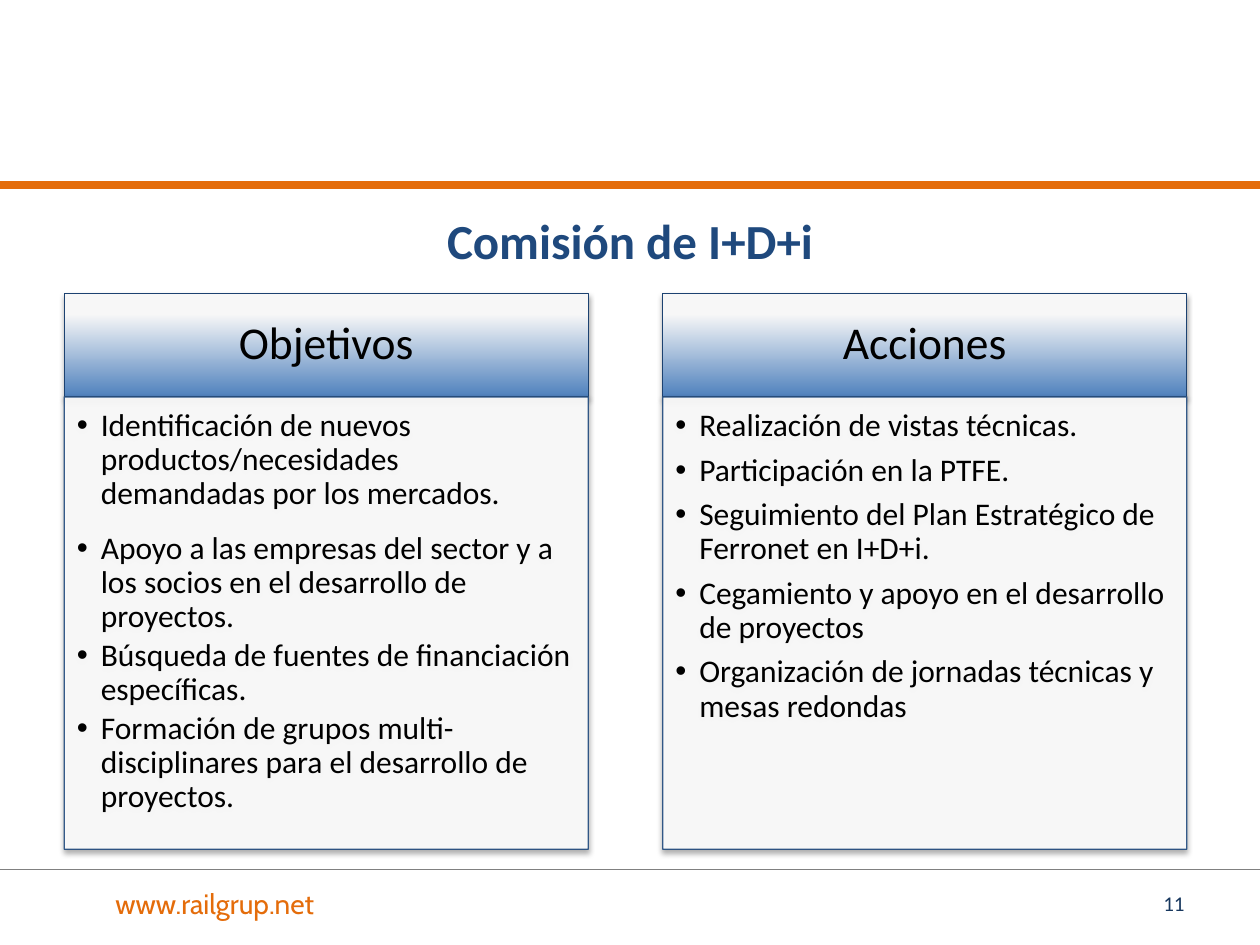
from pptx import Presentation
from pptx.dml.color import RGBColor
from pptx.enum.shapes import MSO_CONNECTOR
from pptx.enum.text import MSO_ANCHOR, MSO_AUTO_SIZE, PP_ALIGN
from pptx.oxml import parse_xml
from pptx.oxml.ns import nsdecls, qn
from pptx.util import Inches, Pt
from copy import deepcopy

STRAIGHT = MSO_CONNECTOR.STRAIGHT
TOP, MIDDLE = MSO_ANCHOR.TOP, MSO_ANCHOR.MIDDLE
LEFT, CENTER, RIGHT = PP_ALIGN.LEFT, PP_ALIGN.CENTER, PP_ALIGN.RIGHT
NO_AUTOFIT = MSO_AUTO_SIZE.NONE

ORANGE = RGBColor(0xE4, 0x6C, 0x0A)
GRAY = RGBColor(0x80, 0x80, 0x80)
NAVY = RGBColor(0x1F, 0x49, 0x7D)
DARK_NAVY = RGBColor(0x17, 0x37, 0x5E)
HEADER_LINE = RGBColor(0x1C, 0x42, 0x71)
BLACK = RGBColor(0, 0, 0)
WHITE = RGBColor(0xFF, 0xFF, 0xFF)
HEADER_STOPS = [
    (0, RGBColor(0x4F, 0x81, 0xBD)),
    (0.8, RGBColor(0xF7, 0xF7, 0xF7)),
    (1, RGBColor(0xF8, 0xF8, 0xF8)),
]

COMPARISON_LAYOUT = 4
PANEL_WIDTH, PANEL_TOP = 4.16, 2.33
HEADER_HEIGHT, BODY_HEIGHT = 0.82, 3.59
BULLET_INDENT = 0.19

# Left edge, heading, items, space after the first item and after the others
PANELS = [
    (0.51, "Objetivos", [
        "Identificación de nuevos productos/necesidades demandadas por los mercados.",
        "Apoyo a las empresas del sector y a los socios en el desarrollo de proyectos.",
        "Búsqueda de fuentes de financiación específicas.",
        "Formación de grupos multi-disciplinares para el desarrollo de proyectos.",
    ], 12, 2.7),
    (5.26, "Acciones", [
        "Realización de vistas técnicas.",
        "Participación en la PTFE.",
        "Seguimiento del Plan Estratégico de Ferronet en I+D+i.",
        "Cegamiento y apoyo en el desarrollo de proyectos",
        "Organización de jornadas técnicas y mesas redondas",
    ], 6, 6),
]


def place(shape, left, top, width, height):
    shape.left, shape.top = Inches(left), Inches(top)
    shape.width, shape.height = Inches(width), Inches(height)


def set_frame(text_frame, anchor, margins=(0.1, 0.05, 0.1, 0.05)):
    text_frame.word_wrap = True
    text_frame.auto_size = NO_AUTOFIT
    text_frame.vertical_anchor = anchor
    (text_frame.margin_left, text_frame.margin_top,
     text_frame.margin_right, text_frame.margin_bottom) = map(Inches, margins)


def format_paragraph(paragraph, size, color, align, font="Calibri", bold=False):
    paragraph.alignment = align
    paragraph.space_before = Pt(0)
    for run in paragraph.runs:
        run.font.name = font
        run.font.size = Pt(size)
        run.font.bold = bold
        run.font.color.rgb = color


def add_bullet(paragraph):
    properties = paragraph._p.get_or_add_pPr()
    properties.set("marL", str(Inches(BULLET_INDENT)))
    properties.set("indent", str(-Inches(BULLET_INDENT)))
    properties.append(parse_xml(f'<a:buFont {nsdecls("a")} typeface="Arial"/>'))
    properties.append(parse_xml(f'<a:buChar {nsdecls("a")} char="•"/>'))


def add_shadow(shape):
    shape._element.spPr.append(parse_xml(
        f'<a:effectLst {nsdecls("a")}>'
        f'<a:outerShdw blurRad="{Pt(3.1)}" dist="{Pt(1.8)}" dir="5400000" rotWithShape="0">'
        '<a:srgbClr val="000000"><a:alpha val="35000"/></a:srgbClr>'
        '</a:outerShdw></a:effectLst>'))


def set_opacity(shape, percent):
    for color in shape._element.spPr.iter(qn("a:srgbClr")):
        color.append(parse_xml(f'<a:alpha {nsdecls("a")} val="{percent * 1000}"/>'))


def set_outline(shape, color):
    shape.line.color.rgb = color
    shape.line.width = Pt(0.75)


def fill_gradient(shape):
    shape.fill.gradient()
    shape.fill.gradient_angle = 90
    stop_list = shape._element.spPr.find(".//" + qn("a:gsLst"))
    stop_list.append(deepcopy(stop_list[-1]))
    for stop, (position, color) in zip(shape.fill.gradient_stops, HEADER_STOPS):
        stop.position = position
        stop.color.rgb = color


def add_rule(slide, top, color, width):
    rule = slide.shapes.add_connector(
        STRAIGHT, Inches(0), Inches(top), Inches(10), Inches(top))
    rule.line.color.rgb = color
    rule.line.width = Pt(width)
    rule._element.spPr.append(parse_xml(f'<a:effectLst {nsdecls("a")}/>'))


def add_footer_text(slide, left, text, size, color, align, font="Calibri"):
    box = slide.shapes.add_textbox(
        Inches(left), Inches(6.97), Inches(2.33), Inches(0.4))
    set_frame(box.text_frame, MIDDLE)
    box.text_frame.text = text
    format_paragraph(box.text_frame.paragraphs[0], size, color, align, font)


def fill_title(title):
    place(title, 0.51, 1.62, 8.98, 0.79)
    set_frame(title.text_frame, TOP)
    title.text_frame.text = "Comisión de I+D+i"
    format_paragraph(title.text_frame.paragraphs[0], 28, NAVY, CENTER, bold=True)


def fill_header(header, left, heading):
    place(header, left, PANEL_TOP, PANEL_WIDTH, HEADER_HEIGHT)
    fill_gradient(header)
    set_outline(header, HEADER_LINE)
    add_shadow(header)
    set_frame(header.text_frame, MIDDLE, (0.2, 0.12, 0.2, 0.12))
    header.text_frame.text = heading
    paragraph = header.text_frame.paragraphs[0]
    paragraph.line_spacing = 0.9
    format_paragraph(paragraph, 26, BLACK, CENTER)


def fill_body(body, left, items, first_gap, gap):
    place(body, left, PANEL_TOP + HEADER_HEIGHT, PANEL_WIDTH, BODY_HEIGHT)
    body.fill.solid()
    body.fill.fore_color.rgb = WHITE
    set_outline(body, NAVY)
    set_opacity(body, 90)
    add_shadow(body)
    set_frame(body.text_frame, TOP, (0.1, 0.1, 0.14, 0.16))
    body.text_frame.text = "\n".join(items)
    for index, paragraph in enumerate(body.text_frame.paragraphs):
        add_bullet(paragraph)
        paragraph.line_spacing = 0.9
        paragraph.space_after = Pt(gap if index else first_gap)
        format_paragraph(paragraph, 18, BLACK, LEFT)


def main():
    presentation = Presentation()
    presentation.slide_width, presentation.slide_height = Inches(10), Inches(7.5)
    slide = presentation.slides.add_slide(
        presentation.slide_layouts[COMPARISON_LAYOUT])
    title, *panel_holders = slide.placeholders

    # Title and the two panels
    fill_title(title)
    holder_pairs = zip(panel_holders[::2], panel_holders[1::2])
    for (header, body), panel in zip(holder_pairs, PANELS):
        left, heading, items, first_gap, gap = panel
        fill_header(header, left, heading)
        fill_body(body, left, items, first_gap, gap)

    # Rules and footer
    add_rule(slide, 1.47, ORANGE, 4.5)
    add_rule(slide, 6.9, GRAY, 0.75)
    add_footer_text(slide, 0.54, "www.railgrup.net", 16, ORANGE, CENTER, "Cabin")
    add_footer_text(slide, 7.17, "11", 12, DARK_NAVY, RIGHT)

    presentation.save("out.pptx")


if __name__ == "__main__":
    main()
